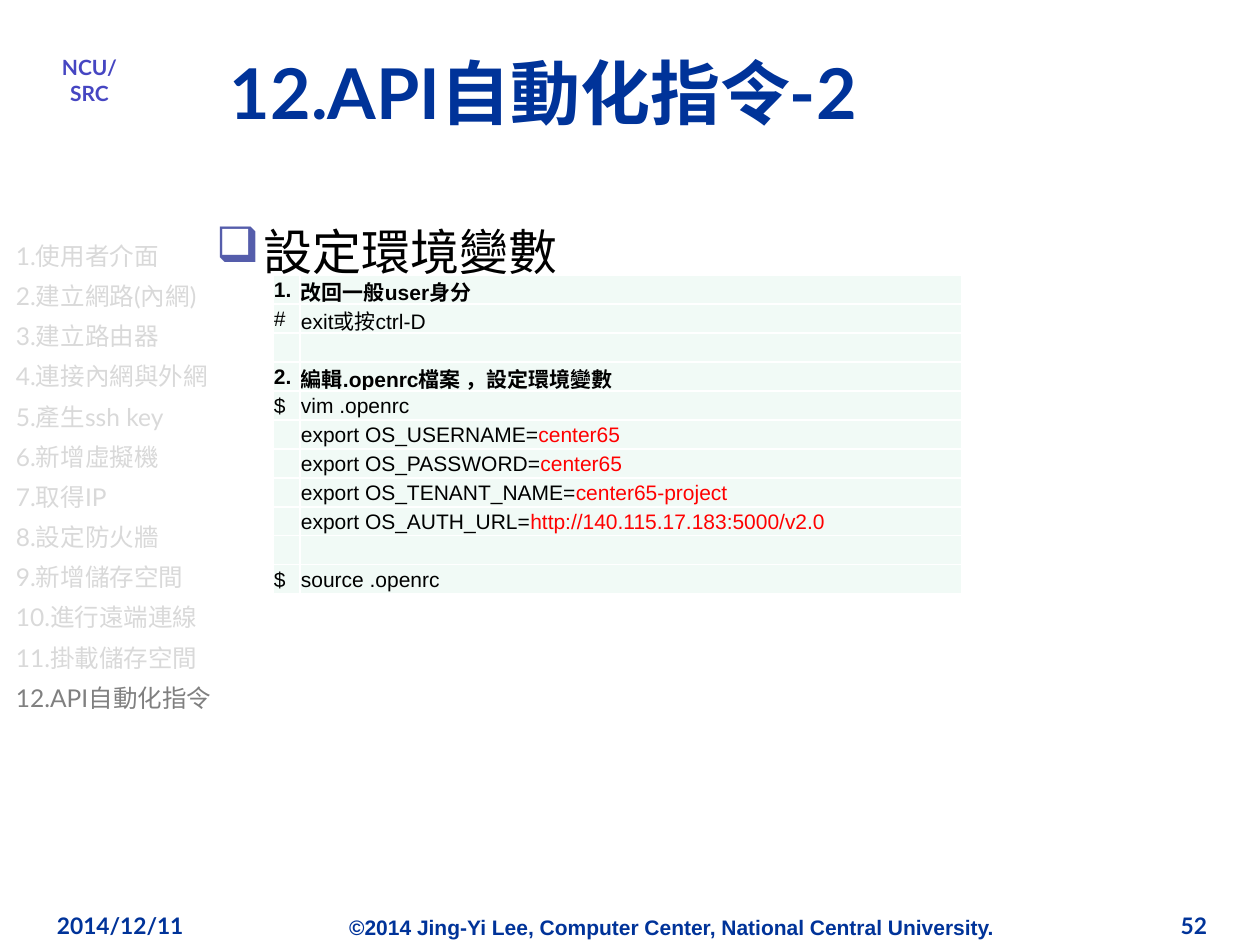
from lxml import etree
from pptx import Presentation
from pptx.dml.color import RGBColor
from pptx.enum.text import MSO_ANCHOR, PP_ALIGN
from pptx.oxml.ns import qn
from pptx.util import Pt

LEFT, MID, RIGHT = PP_ALIGN.LEFT, PP_ALIGN.CENTER, PP_ALIGN.RIGHT
TOP, CENTER = MSO_ANCHOR.TOP, MSO_ANCHOR.MIDDLE
PX = 914400 / 126
NAVY, GREY, PALE, RED, BLACK = "003399", "808080", "D9D9D9", "FF0000", "000000"


def color(code):
    return RGBColor.from_string(code)


def add_run(para, text, size, code, bold=False, face="Lato"):
    run = para.add_run()
    run.text = text
    form = {"size": Pt(size), "bold": bold, "name": face}
    for key, value in form.items():
        setattr(run.font, key, value)
    run.font.color.rgb = color(code)


deck = Presentation()
deck.slide_width, deck.slide_height = round(1260 * PX), round(945 * PX)
slide = deck.slides.add_slide(deck.slide_layouts[6])

# Text boxes: place, insets, wrap, anchor, alignment, lines, size, bold, face
steps = [
    "1.使用者介面", "2.建立網路(內網)", "3.建立路由器", "4.連接內網與外網",
    "5.產生ssh key", "6.新增虛擬機", "7.取得IP", "8.設定防火牆",
    "9.新增儲存空間", "10.進行遠端連線", "11.掛載儲存空間", "12.API自動化指令",
]
menu = [(step, PALE) for step in steps[:-1]] + [(steps[-1], GREY)]
owner = "©2014 Jing-Yi Lee, Computer Center, National Central University."
none, pad = (0, 0), (13, 6)
boxes = [
    ((217, 915, 910, 38), none, True, TOP, MID, [(owner, NAVY)], 12, True, "Arial"),
    ((44, 55, 91, 30), none, False, TOP, MID, [("NCU/SRC", "4646C2")], 12, True, "Lato"),
    ((3, 229, 1071, 660), pad, True, TOP, LEFT, menu, 14, False, "Lato"),
    ((217, 35, 1041, 113), pad, True, CENTER, LEFT,
     [("12.API自動化指令-2", NAVY)], 40, True, "Lato"),
    ((203, 204, 1032, 635), pad, True, TOP, LEFT,
     [("設定環境變數", BLACK)], 28, False, "Lato"),
    ((44, 906, 262, 63), pad, True, TOP, LEFT, [("2014/12/11", NAVY)], 13, True, "Lato"),
    ((958, 906, 262, 63), pad, True, TOP, RIGHT, [("52", NAVY)], 13, True, "Lato"),
]
frames = []
for place, inset, wrap, anchor, align, lines, size, bold, face in boxes:
    frame = slide.shapes.add_textbox(*[round(n * PX) for n in place]).text_frame
    side, edge = [round(n * PX) for n in inset]
    form = {"margin_left": side, "margin_right": side, "margin_top": edge,
            "margin_bottom": edge, "word_wrap": wrap, "vertical_anchor": anchor}
    for key, value in form.items():
        setattr(frame, key, value)
    for i, (text, code) in enumerate(lines):
        para = frame.add_paragraph() if i else frame.paragraphs[0]
        para.alignment = align
        if i:
            para.space_before = Pt(size * 0.2)
        add_run(para, text, size, code, bold, face)
    frames.append(frame)

# Menu and topic line spacing
menu_box, topic = frames[2], frames[4]
for para in [*menu_box.paragraphs, *topic.paragraphs]:
    para.line_spacing = 1.2

# Topic bullet
props = topic.paragraphs[0]._p.get_or_add_pPr()
props.set("marL", str(round(48 * PX)))
props.set("indent", str(round(-48 * PX)))
tint = etree.SubElement(props, qn("a:buClr"))
etree.SubElement(tint, qn("a:srgbClr"), val="555DAB")
etree.SubElement(props, qn("a:buChar"), char="❑")

# Command table: mark, text, red value, bold
rows = [
    ("1.", "改回一般user身分", "", True),
    ("#", "exit或按ctrl-D", "", False),
    ("", "", "", False),
    ("2.", "編輯.openrc檔案 ，設定環境變數", "", True),
    ("$", "vim .openrc", "", False),
    ("", "export OS_USERNAME=", "center65", False),
    ("", "export OS_PASSWORD=", "center65", False),
    ("", "export OS_TENANT_NAME=", "center65-project", False),
    ("", "export OS_AUTH_URL=", "http://140.115.17.183:5000/v2.0", False),
    ("", "", "", False),
    ("$", "source .openrc", "", False),
]
place = [round(n * PX) for n in (273, 275, 689, 29 * len(rows))]
table = slide.shapes.add_table(len(rows), 2, *place).table
for col, width in zip(table.columns, (27, 662)):
    col.width = round(width * PX)
for r, (mark, text, value, bold) in enumerate(rows):
    table.rows[r].height = round(29 * PX)
    for c, parts in enumerate([[(mark, BLACK)], [(text, BLACK), (value, RED)]]):
        cell = table.cell(r, c)
        form = {"margin_left": round(PX), "margin_right": round(PX),
                "margin_top": round(PX), "margin_bottom": 0,
                "vertical_anchor": CENTER}
        for key, item in form.items():
            setattr(cell, key, item)
        para = cell.text_frame.paragraphs[0]
        for part, code in parts:
            if part:
                add_run(para, part, 12, code, bold, "Arial")
        etree.SubElement(para._p, qn("a:endParaRPr"), sz="1200")
        # White borders come before the fill
        props = cell._tc.get_or_add_tcPr()
        for tag in ("a:lnL", "a:lnR", "a:lnT", "a:lnB"):
            line = etree.SubElement(props, qn(tag), w=str(Pt(1)))
            paint = etree.SubElement(line, qn("a:solidFill"))
            etree.SubElement(paint, qn("a:srgbClr"), val="FFFFFF")
        cell.fill.solid()
        cell.fill.fore_color.rgb = color("F1FAF6")

deck.save("out.pptx")
